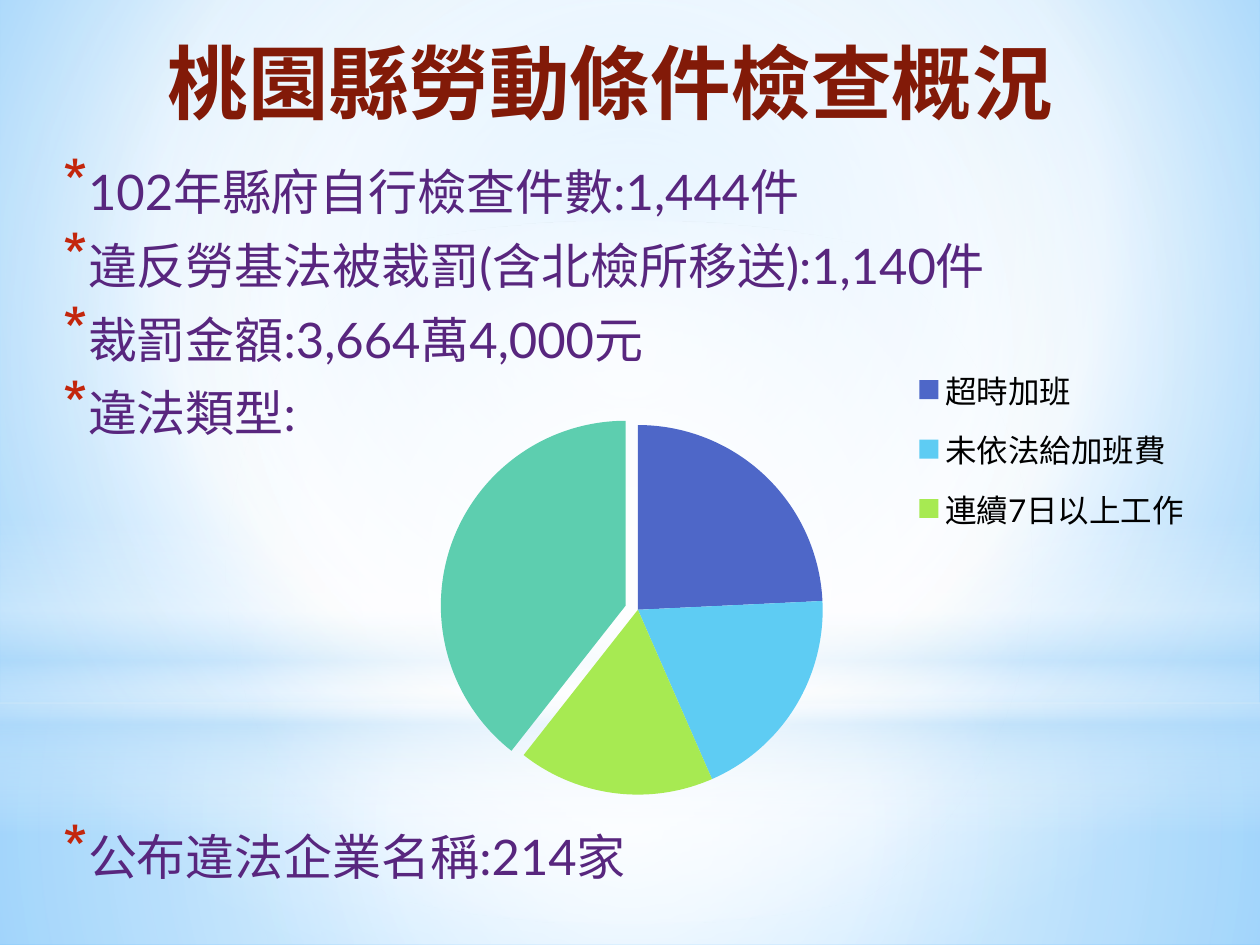
"""Build the labour inspection slide with its pie of violation types."""
import lxml.etree
import pptx
import pptx.chart.data
import pptx.dml.color
import pptx.enum.chart
import pptx.enum.shapes
import pptx.enum.text
import pptx.oxml
import pptx.oxml.ns
import pptx.util

Pt = pptx.util.Pt
RGB = pptx.dml.color.RGBColor
qn = pptx.oxml.ns.qn
KIND = pptx.enum.shapes.MSO_SHAPE
FONT = "Lato"
WHITE = RGB(0xFF, 0xFF, 0xFF)
PALE = RGB(0xB4, 0xDC, 0xFA)
SKY = RGB(0x9E, 0xD5, 0xFF)
BLUE = RGB(0x5B, 0xB9, 0xFF)
BLACK = RGB(0, 0, 0)
MAROON = RGB(0x82, 0x1A, 0x08)
PURPLE = RGB(0x58, 0x26, 0x7E)
RED = RGB(0xC3, 0x26, 0x0C)
SLICES = [RGB(0x4E, 0x67, 0xC8), RGB(0x5E, 0xCC, 0xF3),
          RGB(0xA7, 0xEA, 0x52), RGB(0x5D, 0xCE, 0xAF)]


def shade(props, stops, focus):
    """Swap the solid fill in props for a gradient, radial if focus is given."""
    marks = "".join(
        f'<a:gs pos="{pos * 1000}"><a:srgbClr val="{color}">'
        f'<a:alpha val="{alpha * 1000}"/></a:srgbClr></a:gs>'
        for pos, color, alpha in stops)
    if focus:
        sides = " ".join(f'{side}="{val * 1000}"' for side, val in zip("ltrb", focus))
        way = f'<a:path path="circle"><a:fillToRect {sides}/></a:path>'
    else:
        way = '<a:lin ang="5400000" scaled="0"/>'
    grad = pptx.oxml.parse_xml(
        f'<a:gradFill {pptx.oxml.ns.nsdecls("a")} rotWithShape="1">'
        f'<a:gsLst>{marks}</a:gsLst>{way}</a:gradFill>')
    props.replace(props.find(qn("a:solidFill")), grad)


def write(para, text, size, color, bold=False):
    """Add one styled run to a paragraph."""
    run = para.add_run()
    run.text = text
    run.font.name = FONT
    run.font.size = Pt(size)
    run.font.bold = bold
    run.font.color.rgb = color


deck = pptx.Presentation()
deck.slide_width, deck.slide_height = Pt(720), Pt(540)
slide = deck.slides.add_slide(deck.slide_layouts[6])
slide.background.fill.solid()
shade(next(slide.element.iter(qn("p:bgPr"))),
      [(0, SKY, 100), (60, WHITE, 100), (100, BLUE, 100)], (20, 10, 20, 60))

MID = (50, 50, 50, 50)
layers = [
    (KIND.RECTANGLE, 401.76, 138.24, MID,
     [(0, WHITE, 91), (37, WHITE, 76), (100, PALE, 79)]),
    (KIND.RECTANGLE, 0, 401.76, MID,
     [(0, WHITE, 89), (48, WHITE, 62), (100, PALE, 79)]),
    (KIND.RECTANGLE, 296.64, 180, None,
     [(0, WHITE, 0), (29, WHITE, 30), (45, PALE, 40),
      (55, WHITE, 26), (65, PALE, 60), (100, WHITE, 0)]),
    (KIND.OVAL, 126, 401.76, MID, [(0, WHITE, 100), (56, WHITE, 0)]),
]
for kind, top, height, focus, stops in layers:
    layer = slide.shapes.add_shape(kind, 0, Pt(top), Pt(720), Pt(height))
    layer.shadow.inherit = False
    layer.line.fill.background()
    layer.fill.solid()
    shade(layer.element.spPr, stops, focus)

title = slide.shapes.add_textbox(Pt(82.08), Pt(15.12), Pt(526.32), Pt(90))
title.text_frame.word_wrap = True
head = title.text_frame.paragraphs[0]
head.alignment = pptx.enum.text.PP_ALIGN.RIGHT
write(head, "桃園縣勞動條件檢查概況", 46, MAROON, True)

body = slide.shapes.add_textbox(Pt(25.2), Pt(88.56), Pt(572.4), Pt(430.56))
frame = body.text_frame
frame.word_wrap = True
frame.margin_right = 0
facts = [
    ("102年縣府自行檢查件數:1,444件", 5.6),
    ("違反勞基法被裁罰(含北檢所移送):1,140件", 5.6),
    ("裁罰金額:3,664萬4,000元", 5.6),
    ("違法類型:", 5.6),
    ("公布違法企業名稱:214家", 217),
]
for num, (text, gap) in enumerate(facts):
    para = frame.add_paragraph() if num else frame.paragraphs[0]
    para.space_before, para.space_after = Pt(gap), Pt(3)
    props = para._p.get_or_add_pPr()
    props.set("marL", str(Pt(18)))
    props.set("indent", str(Pt(-14.4)))
    color = lxml.etree.SubElement(props, qn("a:buClr"))
    lxml.etree.SubElement(color, qn("a:srgbClr"), val=str(RED))
    lxml.etree.SubElement(props, qn("a:buSzPct"), val="130000")
    lxml.etree.SubElement(props, qn("a:buChar"), char="*")
    write(para, text, 28, PURPLE)

data = pptx.chart.data.CategoryChartData()
data.categories = ["超時加班", "未依法給加班費", "連續7日以上工作", "其它"]
data.add_series("Series 1", (24, 19, 17, 39))
chart = slide.shapes.add_chart(
    pptx.enum.chart.XL_CHART_TYPE.PIE,
    Pt(201.6), Pt(190.8), Pt(525.6), Pt(274.32), data).chart
chart.has_title = False
chart.font.name, chart.font.size = FONT, Pt(18)
chart.font.color.rgb = BLACK
plot = chart.plots[0]
plot.vary_by_categories = True
for num, color in enumerate(SLICES):
    look = plot.series[0].points[num].format
    look.fill.solid()
    look.fill.fore_color.rgb = color
    look.line.fill.background()
last = plot.series[0]._element.findall(qn("c:dPt"))[-1]
burst = lxml.etree.Element(qn("c:explosion"), val="7")
last.find(qn("c:spPr")).addprevious(burst)

chart.has_legend = True
legend = chart.legend
legend.position = pptx.enum.chart.XL_LEGEND_POSITION.RIGHT
legend.include_in_layout = False
entry = lxml.etree.Element(qn("c:legendEntry"))
lxml.etree.SubElement(entry, qn("c:idx"), val="3")
lxml.etree.SubElement(entry, qn("c:delete"), val="1")
legend._element.find(qn("c:legendPos")).addnext(entry)

area = chart._chartSpace.chart.plotArea
boxes = [(area, (0, 0.19, 0.62, 0.77), True),
         (legend._element, (0.61, 0.04, 0.3, 0.4), False)]
for owner, box, inner in boxes:
    for old in owner.findall(qn("c:layout")):
        owner.remove(old)
    layout = lxml.etree.Element(qn("c:layout"))
    manual = lxml.etree.SubElement(layout, qn("c:manualLayout"))
    if inner:
        lxml.etree.SubElement(manual, qn("c:layoutTarget"), val="inner")
    for mode in ("xMode", "yMode"):
        lxml.etree.SubElement(manual, qn(f"c:{mode}"), val="edge")
    for side, val in zip("xywh", box):
        lxml.etree.SubElement(manual, qn(f"c:{side}"), val=str(val))
    if inner:
        owner.insert(0, layout)
    else:
        entry.addnext(layout)

deck.save("out.pptx")
